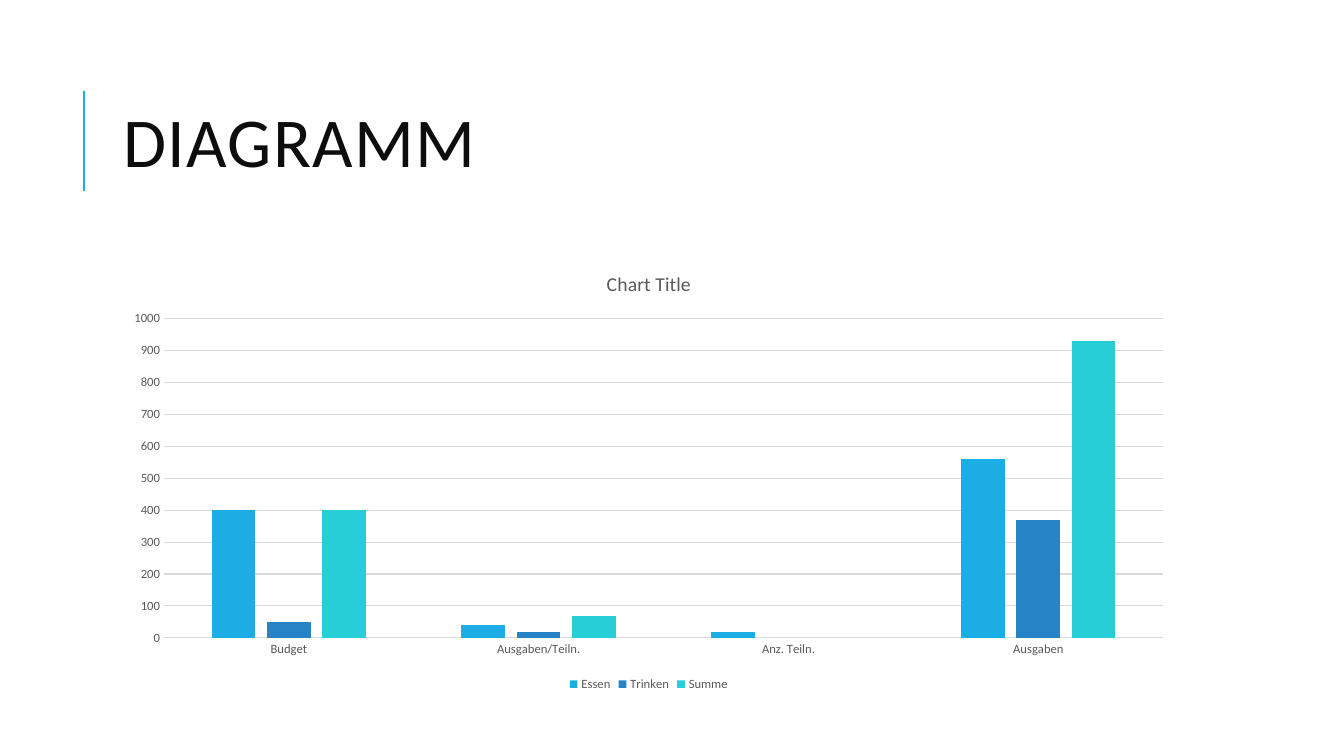
from pptx import Presentation
from pptx.chart.data import CategoryChartData
from pptx.dml.color import RGBColor
from pptx.enum.chart import XL_CHART_TYPE, XL_LEGEND_POSITION, XL_TICK_MARK
from pptx.enum.shapes import MSO_CONNECTOR
from pptx.enum.text import MSO_ANCHOR, PP_ALIGN
from pptx.oxml.ns import qn
from pptx.util import Inches, Pt

W, H = Inches(13.33), Inches(7.5)
LEFT, WIDTH = Inches(1.12), Inches(10.63)
FONT = "Calibri"
COLORS = {
    "title": "0D0D0D",
    "label": "595959",
    "grid": "D9D9D9",
    "accent": "1CADE4",
    "Essen": "1CADE4",
    "Trinken": "2683C6",
    "Summe": "27CED7",
}
CATEGORIES = ["Budget", "Ausgaben/Teiln.", "Anz. Teiln.", "Ausgaben"]
SERIES = {
    "Essen": [400, 40, 20, 560],
    "Trinken": [50, 20, None, 370],
    "Summe": [400, 70, None, 930],
}


def rgb(name):
    return RGBColor.from_string(COLORS[name])


def style_font(font, size, color):
    font.name = FONT
    font.size = Pt(size)
    font.bold = False
    font.color.rgb = rgb(color)


def style_line(line, color, width):
    line.color.rgb = rgb(color)
    line.width = Pt(width)


def add_accent_line(s):
    x = W // 16
    line = s.shapes.add_connector(
        MSO_CONNECTOR.STRAIGHT, x, int(H * 0.12), x, int(H * 0.253))
    style_line(line.line, "accent", 1.5)
    sp_pr = line._element.spPr
    sp_pr.append(sp_pr.makeelement(qn("a:effectLst"), {}))


def set_title(s, text):
    sp = s.shapes.title
    sp.left, sp.top, sp.width, sp.height = LEFT, Inches(0.64), WIDTH, Inches(1.64)
    tf = sp.text_frame
    tf.text = text
    tf.word_wrap = True
    tf.vertical_anchor = MSO_ANCHOR.MIDDLE
    p = tf.paragraphs[0]
    p.alignment = PP_ALIGN.LEFT
    p.line_spacing = 0.8
    style_font(p.font, 50, "title")
    p.runs[0].font._element.set("spc", "100")


def style_axis(axis):
    axis.major_tick_mark = axis.minor_tick_mark = XL_TICK_MARK.NONE
    style_font(axis.tick_labels.font, 9, "label")


def add_budget_chart(s):
    data = CategoryChartData()
    data.categories = CATEGORIES
    for name, values in SERIES.items():
        data.add_series(name, values)
    chart = s.shapes.add_chart(
        XL_CHART_TYPE.COLUMN_CLUSTERED, LEFT, H // 3, WIDTH, Inches(4.4), data).chart
    style_font(chart.font, 10, "label")

    chart.has_title = True
    tf = chart.chart_title.text_frame
    tf.text = "Chart Title"
    style_font(tf.paragraphs[0].font, 14, "label")
    chart.chart_title.include_in_layout = False

    chart.has_legend = True
    chart.legend.position = XL_LEGEND_POSITION.BOTTOM
    chart.legend.include_in_layout = False
    style_font(chart.legend.font, 9, "label")

    for axis in (chart.category_axis, chart.value_axis):
        style_axis(axis)
    style_line(chart.category_axis.format.line, "grid", 0.75)
    chart.value_axis.format.line.fill.background()
    style_line(chart.value_axis.major_gridlines.format.line, "grid", 0.75)

    plot = chart.plots[0]
    plot.vary_by_categories = False
    plot.gap_width, plot.overlap = 219, -27
    for series in plot.series:
        series.format.fill.solid()
        series.format.fill.fore_color.rgb = rgb(series.name)


def main():
    prs = Presentation()
    prs.slide_width, prs.slide_height = W, H
    s = prs.slides.add_slide(prs.slide_layouts[5])
    add_accent_line(s)
    set_title(s, "DIAGRAMM")
    add_budget_chart(s)
    prs.save("out.pptx")


if __name__ == "__main__":
    main()
